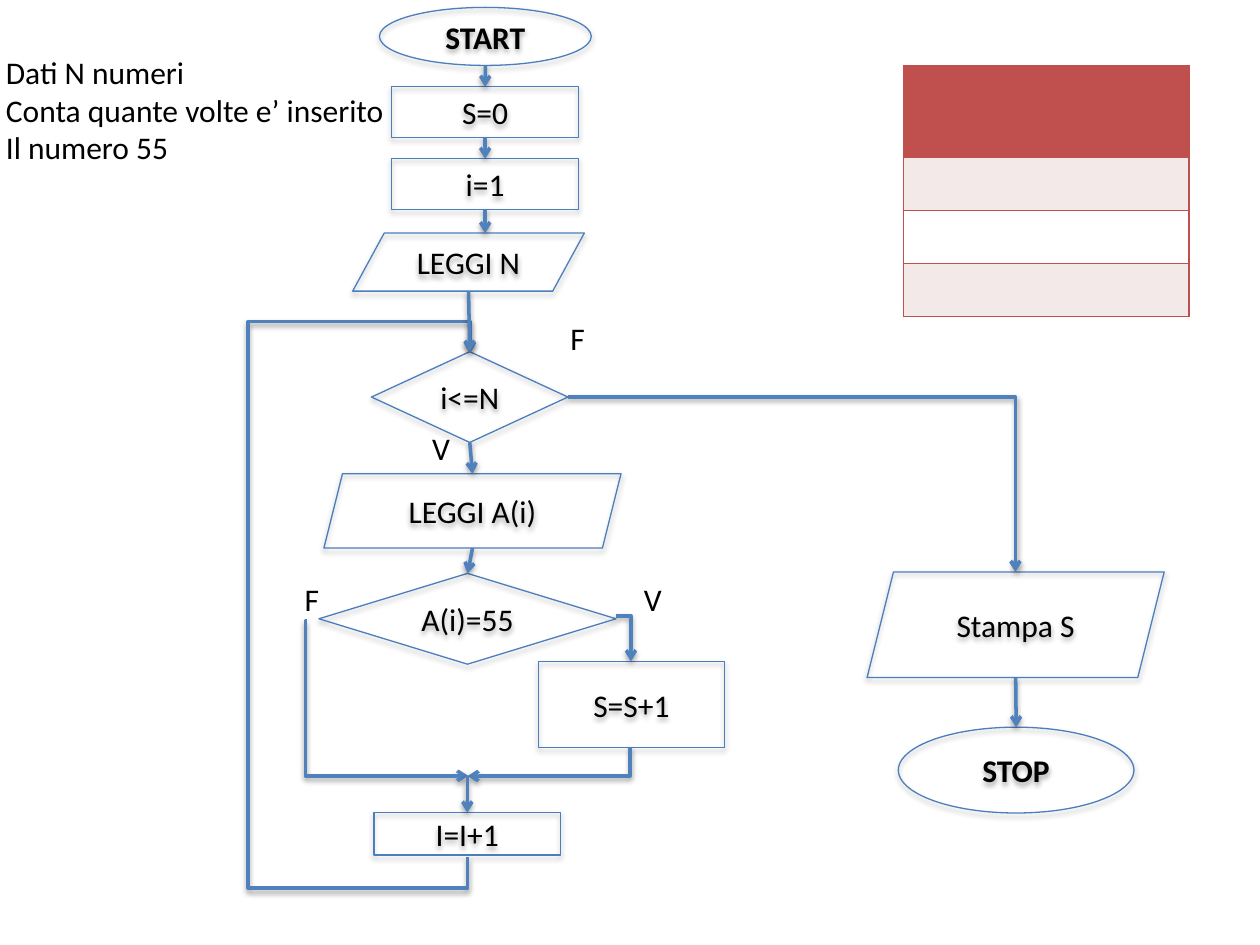
from dataclasses import dataclass

from lxml.etree import SubElement
from pptx import Presentation
from pptx.dml.color import RGBColor
from pptx.enum.shapes import MSO_CONNECTOR as Line, MSO_SHAPE as Geometry
from pptx.enum.text import MSO_ANCHOR as Anchor, MSO_AUTO_SIZE as AutoSize, PP_ALIGN as Align
from pptx.oxml.ns import qn
from pptx.util import Cm, Pt


@dataclass(frozen=True)
class Theme:
    font: str = "Calibri"
    size: float = 18
    text: str = "000000"
    outline: str = "4B7EBC"
    outline_width: float = 0.75
    arrow: str = "4F81BD"
    arrow_width: float = 2
    table: str = "C0504D"
    band: str = "F4E9E9"
    plain: str = "FFFFFF"
    border_width: float = 1


@dataclass(frozen=True)
class Node:
    """A flowchart block; lengths in centimetres."""
    text: str
    geometry: Geometry
    left: float
    top: float
    width: float
    height: float
    bold: bool = False
    slant: float | None = None

    @property
    def centre(self) -> float:
        return self.left + self.width / 2

    @property
    def bottom(self) -> float:
        return self.top + self.height


@dataclass(frozen=True)
class Label:
    text: str
    left: float
    top: float
    width: float = 0.85
    height: float = 1.02


@dataclass(frozen=True)
class Elbow:
    """A bent arrow: its frame before rotation, and its bends in thousandths of a percent."""
    left: float
    top: float
    width: float
    height: float
    bends: tuple[int, ...] = ()
    preset: str = "bentConnector2"
    rotation: int = 0
    flipped: bool = False


THEME = Theme()

START = Node("START", Geometry.OVAL, 7.65, 0.15, 4.27, 1.17, bold=True)
SUM_ZERO = Node("S=0", Geometry.RECTANGLE, 7.9, 1.75, 3.76, 1.02)
INDEX_ONE = Node("i=1", Geometry.RECTANGLE, 7.9, 3.2, 3.76, 1.02)
READ_N = Node("LEGGI N", Geometry.PARALLELOGRAM, 7.11, 4.7, 4.67, 1.17, slant=0.544)
LOOP_TEST = Node("i<=N", Geometry.DIAMOND, 7.49, 7.09, 3.96, 1.83)
READ_ITEM = Node("LEGGI A(i)", Geometry.PARALLELOGRAM, 6.53, 9.55, 5.99, 1.5)
ITEM_TEST = Node("A(i)=55", Geometry.DIAMOND, 6.43, 11.56, 5.99, 1.83)
ADD_ONE = Node("S=S+1", Geometry.RECTANGLE, 10.85, 13.34, 3.76, 1.73)
NEXT_INDEX = Node("I=I+1", Geometry.RECTANGLE, 7.54, 16.38, 3.76, 0.86)
PRINT_SUM = Node("Stampa S", Geometry.PARALLELOGRAM, 17.48, 11.53, 5.99, 2.13)
STOP = Node("STOP", Geometry.OVAL, 18.11, 14.66, 4.75, 1.73, bold=True)
NODES = (START, SUM_ZERO, INDEX_ONE, READ_N, LOOP_TEST, READ_ITEM, ITEM_TEST,
         ADD_ONE, NEXT_INDEX, PRINT_SUM, STOP)
LINKS = ((START, SUM_ZERO), (SUM_ZERO, INDEX_ONE), (READ_N, LOOP_TEST),
         (LOOP_TEST, READ_ITEM), (READ_ITEM, ITEM_TEST), (PRINT_SUM, STOP))
JOIN_TOP = 15.65

ELBOWS = (
    Elbow(12.42, 12.42, 0.3, 0.91),
    Elbow(6.17, 12.52, 3.27, 3.12, (-300,), "bentConnector3"),
    Elbow(10.77, 13.72, 0.58, 3.27, rotation=90),
    Elbow(4.37, 12.17, 10.16, 0.05, (-6200, -8840000, 106200), "bentConnector5", 90, True),
    Elbow(11.46, 8, 9.01, 3.53),
)
LABELS = (
    Label("F", 5.89, 11.56),
    Label("V", 12.73, 11.56),
    Label("V", 8.46, 8.53),
    Label("F", 11.25, 6.3),
    Label("Dati N numeri\nConta quante volte e’ inserito\nIl numero 55", -0.13, 0.94, 8.2, 2.57),
)


def apply(target, values: dict) -> None:
    for name, value in values.items():
        setattr(target, name, value)


def write(frame, text: str, align: Align, bold: bool = False) -> None:
    frame.text = text
    for paragraph in frame.paragraphs:
        paragraph.alignment = align
        font = paragraph.runs[0].font
        apply(font, {"name": THEME.font, "size": Pt(THEME.size), "bold": bold})
        font.color.rgb = RGBColor.from_string(THEME.text)


def add_shadow(effects, distance: int, opacity: int) -> None:
    shadow = SubElement(effects, qn("a:outerShdw"), blurRad="40000", dist=str(distance),
                        dir="5400000", rotWithShape="0")
    color = SubElement(shadow, qn("a:srgbClr"), val="000000")
    SubElement(color, qn("a:alpha"), val=str(opacity * 1000))


def set_line(line, color: str, width: float) -> None:
    line.color.rgb = RGBColor.from_string(color)
    line.width = Pt(width)


def add_node(slide, node: Node) -> None:
    shape = slide.shapes.add_shape(node.geometry, Cm(node.left), Cm(node.top),
                                   Cm(node.width), Cm(node.height))
    if node.slant is not None:
        shape.adjustments[0] = node.slant
    shape.fill.background()
    set_line(shape.line, THEME.outline, THEME.outline_width)
    shape.shadow.inherit = False
    add_shadow(shape._element.spPr.find(qn("a:effectLst")), 23000, 35)
    apply(shape.text_frame, {"word_wrap": True, "vertical_anchor": Anchor.MIDDLE})
    write(shape.text_frame, node.text, Align.CENTER, node.bold)


def add_arrow(slide, kind: Line, x1: float, y1: float, x2: float, y2: float):
    connector = slide.shapes.add_connector(kind, Cm(x1), Cm(y1), Cm(x2), Cm(y2))
    set_line(connector.line, THEME.arrow, THEME.arrow_width)
    properties = connector._element.spPr
    SubElement(properties.find(qn("a:ln")), qn("a:tailEnd"), type="arrow")
    add_shadow(SubElement(properties, qn("a:effectLst")), 20000, 38)
    return connector


def add_elbow(slide, elbow: Elbow) -> None:
    connector = add_arrow(slide, Line.ELBOW, elbow.left, elbow.top,
                          elbow.left + elbow.width, elbow.top + elbow.height)
    properties = connector._element.spPr
    frame = properties.find(qn("a:xfrm"))
    if elbow.rotation:
        frame.set("rot", str(elbow.rotation * 60000))
    if elbow.flipped:
        frame.set("flipH", "1")
        frame.set("flipV", "1")
    geometry = properties.find(qn("a:prstGeom"))
    geometry.set("prst", elbow.preset)
    guides = geometry.find(qn("a:avLst"))
    for number, bend in enumerate(elbow.bends, 1):
        SubElement(guides, qn("a:gd"), name=f"adj{number}", fmla=f"val {bend}")


def add_label(slide, label: Label) -> None:
    box = slide.shapes.add_textbox(Cm(label.left), Cm(label.top),
                                   Cm(label.width), Cm(label.height))
    apply(box.text_frame, {"word_wrap": False, "auto_size": AutoSize.SHAPE_TO_FIT_TEXT})
    write(box.text_frame, label.text, Align.LEFT)


def set_border(cell, side: str, visible: bool) -> None:
    border = SubElement(cell._tc.get_or_add_tcPr(), qn(f"a:ln{side}"),
                        w=str(Pt(THEME.border_width)))
    if visible:
        fill = SubElement(border, qn("a:solidFill"))
        SubElement(fill, qn("a:srgbClr"), val=THEME.table)
    else:
        SubElement(border, qn("a:noFill"))


def add_empty_table(slide) -> None:
    row_fills = (THEME.table, THEME.band, THEME.plain, THEME.band)
    row_heights = (1.85, 1.07, 1.07, 1.07)
    columns, column_width = 3, 1.92
    table = slide.shapes.add_table(len(row_fills), columns, Cm(18.21), Cm(1.32),
                                   Cm(columns * column_width), Cm(sum(row_heights))).table
    for column in table.columns:
        column.width = Cm(column_width)
    for row, height, color in zip(table.rows, row_heights, row_fills):
        row.height = Cm(height)
        for index, cell in enumerate(row.cells):
            sides = {"L": index == 0, "R": index == columns - 1, "T": True, "B": True}
            for side, visible in sides.items():
                set_border(cell, side, visible)
            cell.fill.solid()
            cell.fill.fore_color.rgb = RGBColor.from_string(color)


def main() -> None:
    presentation = Presentation()
    apply(presentation, {"slide_width": Cm(25.4), "slide_height": Cm(19.05)})
    slide = presentation.slides.add_slide(presentation.slide_layouts[6])
    for node in NODES:
        add_node(slide, node)
    for elbow in ELBOWS:
        add_elbow(slide, elbow)
    for label in LABELS:
        add_label(slide, label)
    add_empty_table(slide)
    for source, target in LINKS:
        add_arrow(slide, Line.STRAIGHT, source.centre, source.bottom, target.centre, target.top)
    for x, top, target in ((INDEX_ONE.centre, INDEX_ONE.bottom, READ_N),
                           (NEXT_INDEX.centre, JOIN_TOP, NEXT_INDEX)):
        add_arrow(slide, Line.STRAIGHT, x, top, x, target.top)
    presentation.save("out.pptx")


if __name__ == "__main__":
    main()
